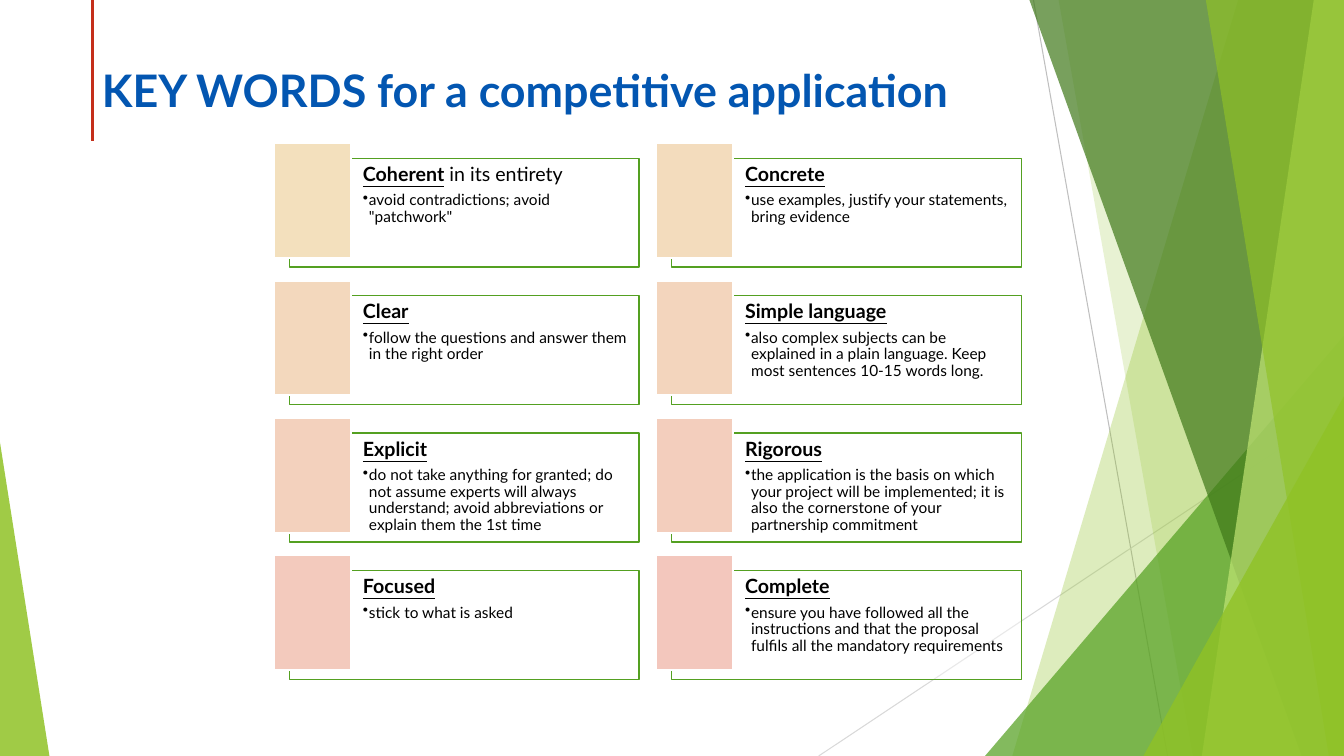
from dataclasses import dataclass
from lxml import etree
from pptx import Presentation, util as u
from pptx.dml.color import RGBColor
from pptx.enum import shapes, text
from pptx.oxml import ns


@dataclass(frozen=True)
class Theme:
    face: str = "Lato"
    head: int = 32
    term: int = 14
    note: int = 11
    blue: str = "0356B1"
    black: str = "000000"
    white: str = "FFFFFF"
    red: str = "C42F1A"
    green: str = "54A021"
    lime: str = "90C226"
    dark: str = "3F7819"
    pale: str = "C0E474"
    grey: str = "BFBFBF"
    mist: str = "D9D9D9"


T = Theme()
WIDE, HIGH = 13.33, 7.5
LEFT, TOP = 2.72, 1.42
COL, ROW = 3.79, 4.09 / 3

CARDS = [
    ("Coherent", " in its entirety", 'avoid contradictions; avoid "patchwork"'),
    ("Concrete", "", "use examples, justify your statements, bring evidence"),
    ("Clear", "", "follow the questions and answer them in the right order"),
    ("Simple language", "", "also complex subjects can be explained in a plain "
     "language. Keep most sentences 10-15 words long."),
    ("Explicit", "", "do not take anything for granted; do not assume experts "
     "will always understand; avoid abbreviations or explain them the 1st time"),
    ("Rigorous", "", "the application is the basis on which your project will be "
     "implemented; it is also the cornerstone of your partnership commitment"),
    ("Focused", "", "stick to what is asked"),
    ("Complete", "", "ensure you have followed all the instructions and that the "
     "proposal fulfils all the mandatory requirements"),
]


def paint(shape, color, alpha=100, edge=None, width=1):
    shape.shadow.inherit = False
    shape.fill.solid()
    shape.fill.fore_color.rgb = RGBColor.from_string(color)
    if alpha < 100:
        tint = shape.fill._xPr.find(".//" + ns.qn("a:srgbClr"))
        etree.SubElement(tint, ns.qn("a:alpha"), val=str(alpha * 1000))
    if edge:
        shape.line.color.rgb = RGBColor.from_string(edge)
        shape.line.width = u.Pt(width)
    else:
        shape.line.fill.background()


def block(slide, kind, box):
    return slide.shapes.add_shape(kind, *map(u.Inches, box))


def rule(slide, start, end, color, width):
    ends = map(u.Inches, (*start, *end))
    line = slide.shapes.add_connector(shapes.MSO_CONNECTOR.STRAIGHT, *ends)
    line.line.color.rgb = RGBColor.from_string(color)
    line.line.width = u.Pt(width)
    etree.SubElement(line._element.spPr, ns.qn("a:effectLst"))


def shard(slide, top, foot, color, alpha):
    pen = slide.shapes.build_freeform(u.Inches(top), 0)
    rest = [(WIDE, 0), (WIDE, HIGH), (foot, HIGH)]
    pen.add_line_segments([(u.Inches(x), u.Inches(y)) for x, y in rest])
    paint(pen.convert_to_shape(), color, alpha)


def wedge(slide, box, tip, color, alpha):
    shape = block(slide, shapes.MSO_SHAPE.ISOSCELES_TRIANGLE, box)
    shape.adjustments[0] = tip
    paint(shape, color, alpha)


def style(para, size, color):
    para.font.name = T.face
    para.font.size = u.Pt(size)
    para.font.color.rgb = RGBColor.from_string(color)


def backdrop(slide):
    rule(slide, (10.25, 0), (11.58, HIGH), T.grey, 0.75)
    rule(slide, (WIDE, 4.03), (8.12, HIGH), T.mist, 0.75)
    shard(slide, 12.28, 10.04, T.lime, 30)
    shard(slide, 10.5, 11.83, T.lime, 20)
    wedge(slide, (9.77, 3.33, 3.56, 4.17), 1, T.green, 72)
    shard(slide, 10.21, 12.91, T.dark, 70)
    shard(slide, 13.03, 11.92, T.pale, 70)
    shard(slide, 11.96, 13.18, T.lime, 65)
    wedge(slide, (11.34, 3.93, 1.99, 3.57), 1, T.lime, 80)
    wedge(slide, (0, 4.39, 0.49, 3.11), 0, T.lime, 85)
    rule(slide, (0.92, 0), (0.92, 1.4), T.red, 2.25)


def title(slide, words):
    head = slide.shapes.title
    head.left, head.top, head.width, head.height = map(
        u.Inches, (0.91, 0.57, 11.5, 0.86))
    frame = head.text_frame
    frame.text = words
    frame.auto_size = text.MSO_AUTO_SIZE.NONE
    frame.vertical_anchor = text.MSO_ANCHOR.TOP
    para = frame.paragraphs[0]
    para.alignment = text.PP_ALIGN.LEFT
    style(para, T.head, T.blue)
    para.font.bold = True


def fill_card(frame, term, rest, note):
    frame.word_wrap = True
    frame.vertical_anchor = text.MSO_ANCHOR.TOP
    frame.margin_left = u.Inches(0.73)
    frame.margin_top = frame.margin_right = frame.margin_bottom = u.Inches(0.06)
    name, point = frame.paragraphs[0], frame.add_paragraph()
    props = point._p.get_or_add_pPr()
    props.set("marL", str(u.Inches(0.06)))
    props.set("indent", str(-u.Inches(0.06)))
    etree.SubElement(props, ns.qn("a:buChar"), char="•")
    point.level = 1
    for para, size in ((name, T.term), (point, T.note)):
        para.alignment = text.PP_ALIGN.LEFT
        para.line_spacing = 0.9
        style(para, size, T.black)
    name.space_after = u.Pt(5)
    key = name.add_run()
    key.text = term
    key.font.bold = key.font.underline = True
    if rest:
        name.add_run().text = rest
    point.add_run().text = note


def card(slide, index, words):
    row, col = divmod(index, 2)
    x, y = LEFT + col * COL, TOP + row * ROW
    rect = shapes.MSO_SHAPE.RECTANGLE
    panel = block(slide, rect, (x + 0.15, y + 0.15, 3.47, 1.08))
    paint(panel, T.white, 40, T.green)
    fill_card(panel.text_frame, *words)
    tile = block(slide, rect, (x, y, 0.76, 1.14))
    shade = int(224 - 25 * index / (len(CARDS) - 1))
    paint(tile, f"F3{shade:02X}BD", edge=T.white, width=1.5)


def main():
    deck = Presentation()
    deck.slide_width, deck.slide_height = u.Inches(WIDE), u.Inches(HIGH)
    slide = deck.slides.add_slide(deck.slide_layouts[5])
    backdrop(slide)
    for index, words in enumerate(CARDS):
        card(slide, index, words)
    title(slide, "KEY WORDS for a competitive application")
    deck.save("out.pptx")


if __name__ == "__main__":
    main()
